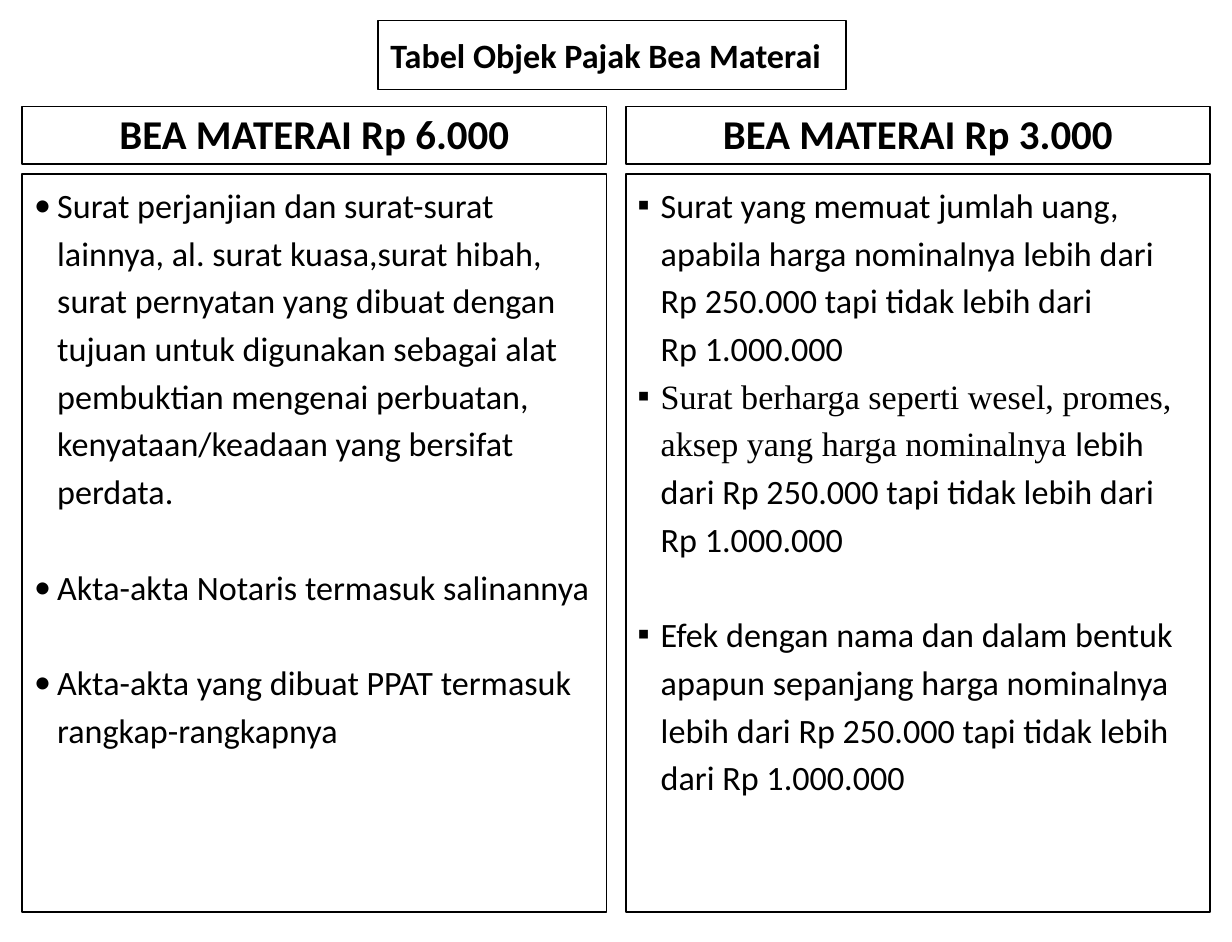
from lxml.etree import SubElement
from pptx import Presentation
from pptx.dml.color import RGBColor
from pptx.enum.shapes import MSO_SHAPE
from pptx.enum.text import MSO_ANCHOR, PP_ALIGN
from pptx.oxml.ns import qn
from pptx.util import Pt

BLACK = RGBColor(0x00, 0x00, 0x00)
SANS = "Calibri"
SERIF = "Times New Roman"

COLUMN_LEFT = 13
COLUMN_WIDTH = 343
COLUMN_STEP = 354.2
LINE_PITCH = 28
HANGING = 13.5

# Each item: serif opening, remaining text, blank lines above
STAMP_DUTIES = [
    ("BEA MATERAI Rp 6.000", "•", [
        ("", "Surat perjanjian dan surat-surat lainnya, al. surat kuasa,surat hibah, "
             "surat pernyatan yang dibuat dengan tujuan untuk digunakan sebagai alat "
             "pembuktian mengenai perbuatan, kenyataan/keadaan yang bersifat perdata.", 0),
        ("", "Akta-akta Notaris termasuk salinannya", 1),
        ("", "Akta-akta yang dibuat PPAT termasuk rangkap-rangkapnya", 1),
    ]),
    ("BEA MATERAI Rp 3.000", "▪", [
        ("", "Surat yang memuat jumlah uang, apabila harga nominalnya lebih dari\v"
             "Rp 250.000 tapi tidak lebih dari\vRp 1.000.000", 0),
        ("Surat berharga seperti wesel, promes, aksep yang harga nominalnya ",
         "lebih\vdari Rp 250.000 tapi tidak lebih dari\vRp 1.000.000", 0),
        ("", "Efek dengan nama dan dalam bentuk apapun sepanjang harga nominalnya "
             "lebih dari Rp 250.000 tapi tidak lebih dari Rp 1.000.000", 1),
    ]),
]


class TaxSlide:
    def __init__(self, slide):
        self.slide = slide

    def style_run(self, run, size, font=SANS, bold=False):
        run.font.name = font
        run.font.size = Pt(size)
        run.font.bold = bold
        run.font.color.rgb = BLACK

    def frame(self, left, top, width, height, anchor):
        """Add an outlined box and return its text frame."""
        box = self.slide.shapes.add_shape(
            MSO_SHAPE.RECTANGLE, Pt(left), Pt(top), Pt(width), Pt(height))
        box.shadow.inherit = False
        box.fill.background()
        box.line.color.rgb = BLACK
        box.line.width = Pt(1)
        box.text_frame.word_wrap = True
        box.text_frame.vertical_anchor = anchor
        return box.text_frame

    def heading(self, text, bounds, size, align, anchor):
        frame = self.frame(*bounds, anchor)
        frame.text = text
        paragraph = frame.paragraphs[0]
        paragraph.alignment = align
        self.style_run(paragraph.runs[0], size, bold=True)

    def bullet_list(self, items, bullet, bounds):
        frame = self.frame(*bounds, MSO_ANCHOR.TOP)
        frame.margin_top = Pt(2)
        for index, (opening, rest, blank_lines) in enumerate(items):
            paragraph = frame.add_paragraph() if index else frame.paragraphs[0]
            paragraph.alignment = PP_ALIGN.LEFT
            paragraph.line_spacing = Pt(LINE_PITCH)
            paragraph.space_before = Pt(LINE_PITCH * blank_lines)
            self.add_bullet(paragraph, bullet)
            if opening:
                self.add_text(paragraph, opening, SERIF)
            for line_index, line in enumerate(rest.split("\v")):
                if line_index:
                    paragraph.add_line_break()
                self.add_text(paragraph, line, SANS)

    def add_text(self, paragraph, text, font):
        run = paragraph.add_run()
        run.text = text
        self.style_run(run, 20, font)

    def add_bullet(self, paragraph, bullet):
        properties = paragraph._p.get_or_add_pPr()
        properties.set("marL", str(Pt(HANGING)))
        properties.set("indent", str(-Pt(HANGING)))
        SubElement(properties, qn("a:buFont")).set("typeface", SANS)
        SubElement(properties, qn("a:buChar")).set("char", bullet)


def main():
    presentation = Presentation()
    presentation.slide_width = Pt(723)
    presentation.slide_height = Pt(553)
    tax = TaxSlide(presentation.slides.add_slide(presentation.slide_layouts[6]))

    tax.heading("Tabel Objek Pajak Bea Materai", (222, 12, 274.5, 40.5),
                20, PP_ALIGN.LEFT, MSO_ANCHOR.MIDDLE)
    for index, (duty, bullet, items) in enumerate(STAMP_DUTIES):
        left = COLUMN_LEFT + index * COLUMN_STEP
        tax.heading(duty, (left, 62.6, COLUMN_WIDTH, 33.8),
                    24, PP_ALIGN.CENTER, MSO_ANCHOR.BOTTOM)
        tax.bullet_list(items, bullet, (left, 102.2, COLUMN_WIDTH, 433.4))

    presentation.save("out.pptx")


if __name__ == "__main__":
    main()
